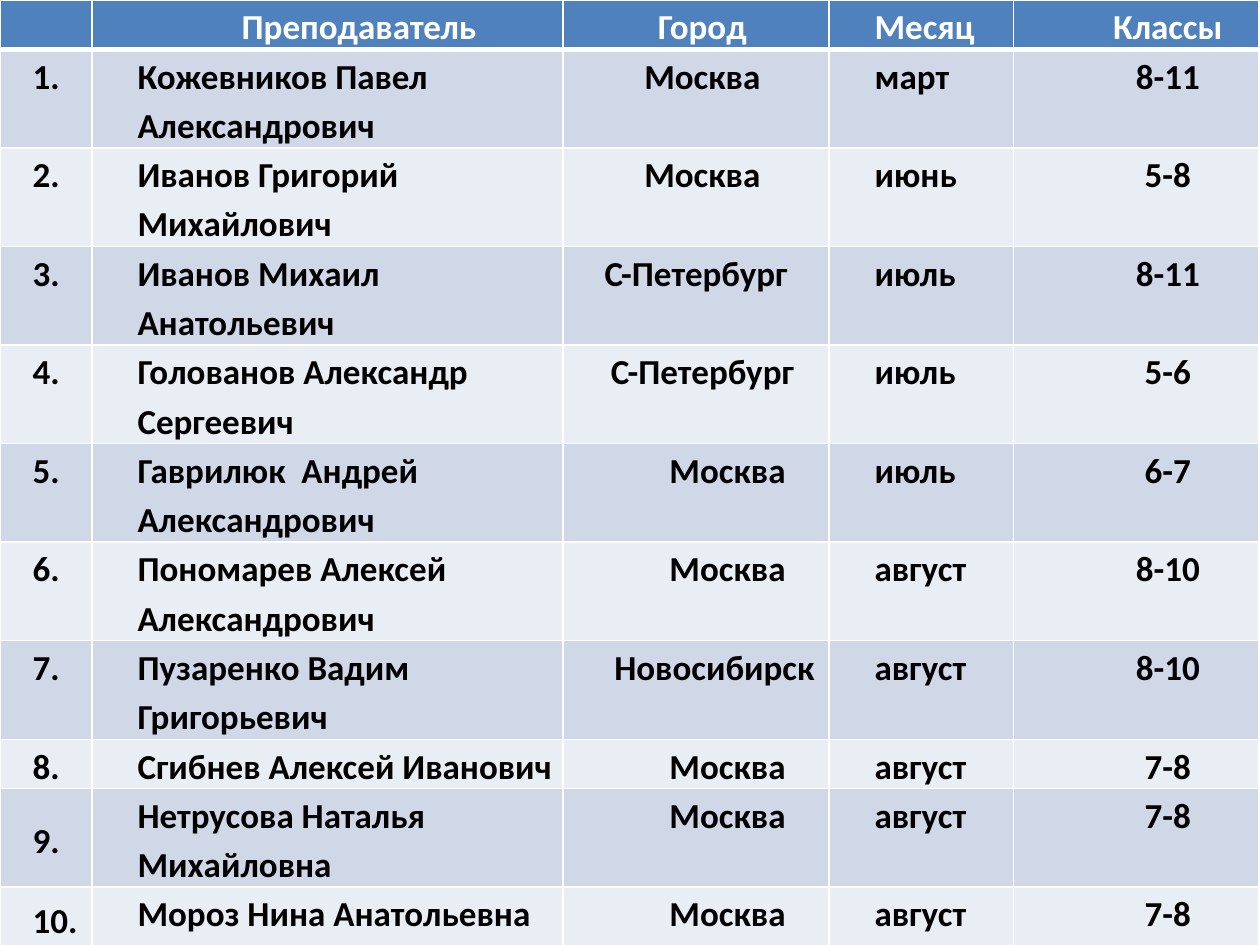
from dataclasses import dataclass

from lxml import etree
from pptx import Presentation, util as u
from pptx.dml.color import RGBColor
from pptx.enum import text
from pptx.oxml import ns


@dataclass
class Theme:
    font: str = "Calibri"
    size: float = 20
    space: float = 1.15
    back: str = "1F497D"
    head: str = "4F81BD"
    odd: str = "D0D8E8"
    even: str = "E9EDF4"
    light: str = "FFFFFF"
    dark: str = "000000"
    thin: float = 1
    thick: float = 3


class Deck:
    """Holds the theme and the current slide, and draws table elements."""

    def __init__(self, theme, wide, high):
        self.theme = theme
        self.file = Presentation()
        self.file.slide_width, self.file.slide_height = u.Pt(wide), u.Pt(high)
        self.slide = self.file.slides.add_slide(self.file.slide_layouts[6])
        self.paint(self.slide.background.fill, theme.back)

    def paint(self, fill, color):
        fill.solid()
        fill.fore_color.rgb = RGBColor.from_string(color)

    def grid(self, cols, rows):
        frame = self.slide.shapes.add_table(
            len(rows), len(cols), 0, 0, u.Pt(sum(cols)), u.Pt(sum(rows)))
        table = frame.table
        table.first_row = table.horz_banding = False
        for col, wide in zip(table.columns, cols):
            col.width = u.Pt(wide)
        for row, high in zip(table.rows, rows):
            row.height = u.Pt(high)
        return table

    def edge(self, cell, side, width):
        props = cell._tc.get_or_add_tcPr()
        line = etree.SubElement(props, ns.qn("a:ln" + side), w=str(u.Pt(width)))
        fill = etree.SubElement(line, ns.qn("a:solidFill"))
        etree.SubElement(fill, ns.qn("a:srgbClr"), val=self.theme.light)

    def cell(self, cell, words, fill, color, align, left, first, top, base):
        theme = self.theme
        cell.margin_left = cell.margin_right = u.Pt(5)
        cell.margin_top = cell.margin_bottom = 0
        for side, width in zip("LRTB", (theme.thin, theme.thin, top, base)):
            self.edge(cell, side, width)
        self.paint(cell.fill, fill)
        para = cell.text_frame.paragraphs[0]
        para.text = words
        para.alignment = align
        para.line_spacing = theme.space
        props = para._p.get_or_add_pPr()
        props.set("marL", str(u.Pt(left)))
        props.set("indent", str(u.Pt(first)))
        for run in para.runs:
            font = run.font
            font.name, font.size, font.bold = theme.font, u.Pt(theme.size), True
            font.color.rgb = RGBColor.from_string(color)


HEAD = ("", "Преподаватель", "Город", "Месяц", "Классы")
STAFF = [
    ("Кожевников Павел Александрович", "Москва", "март", "8-11"),
    ("Иванов Григорий Михайлович", "Москва", "июнь", "5-8"),
    ("Иванов Михаил Анатольевич", "С-Петербург", "июль", "8-11"),
    ("Голованов Александр Сергеевич", "С-Петербург", "июль", "5-6"),
    ("Гаврилюк  Андрей Александрович", "Москва", "июль", "6-7"),
    ("Пономарев Алексей Александрович", "Москва", "август", "8-10"),
    ("Пузаренко Вадим Григорьевич", "Новосибирск", "август", "8-10"),
    ("Сгибнев Алексей Иванович", "Москва", "август", "7-8"),
    ("Нетрусова Наталья Михайловна", "Москва", "август", "7-8"),
    ("Мороз Нина Анатольевна", "Москва", "август", "7-8"),
]
COLS = (52.6, 269.2, 152, 105.4, 140.4)
ROWS = (25.2, *[52.6] * 7, 25.2, 52.6, 36)
LEFT, MID = text.PP_ALIGN.LEFT, text.PP_ALIGN.CENTER
ALIGN = (LEFT, LEFT, MID, LEFT, MID)
INDENT = ((13.7, 0), (21, 0), (36, 0), (36, -15), (36, 0))
SPECIAL = {
    (0, 1): (36, 0), (0, 2): (7.2, 0),
    (1, 0): (2, 11.7), (1, 2): (36, -28.8),
    (2, 2): (36, -28.8), (2, 3): (21, 0),
    (3, 2): (0, 0), (4, 2): (21, -13.7), (7, 2): (36, -15),
    (8, 0): (36, -22.3), (9, 0): (36, -22.3), (10, 0): (36, -22.3),
}

theme = Theme()
deck = Deck(theme, 720, 540)
table = deck.grid(COLS, ROWS)
lines = [HEAD] + [(f"{n}.", *who) for n, who in enumerate(STAFF, 1)]
for r, line in enumerate(lines):
    fill = theme.head if r == 0 else theme.odd if r % 2 else theme.even
    color = theme.dark if r else theme.light
    top = theme.thick if r == 1 else theme.thin
    base = theme.thin if r else theme.thick
    for c, words in enumerate(line):
        align = MID if (r, c) == (0, 1) else ALIGN[c]
        left, first = SPECIAL.get((r, c), INDENT[c])
        deck.cell(table.cell(r, c), words, fill, color, align, left, first, top, base)
for r in (9, 10):
    table.cell(r, 0).vertical_anchor = text.MSO_ANCHOR.MIDDLE
deck.file.save("out.pptx")
